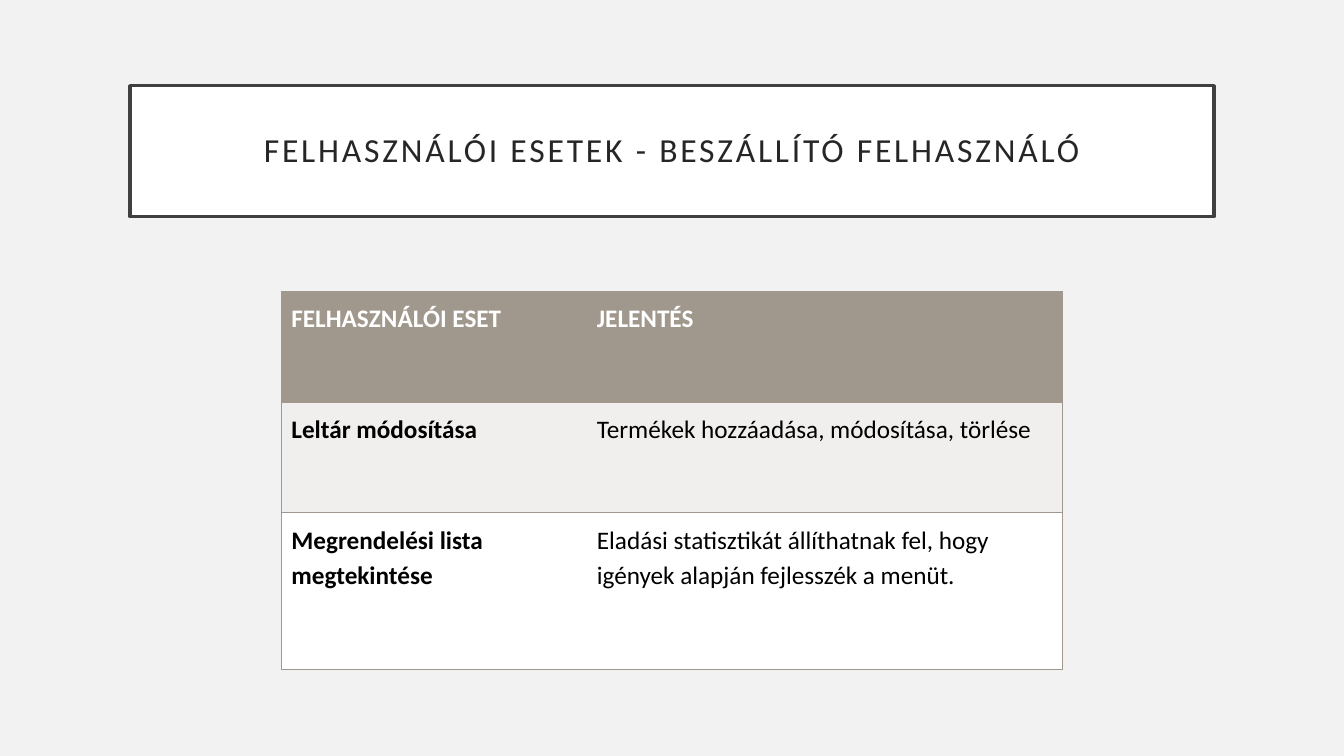
from lxml import etree
from pptx import Presentation
from pptx import util as u
from pptx.dml import color
from pptx.enum import text
from pptx.oxml import ns

COLORS = {
    "background": "F2F2F2",
    "white": "FFFFFF",
    "frame": "404040",
    "title": "262626",
    "taupe": "A0988C",
    "band": "F0EFEE",
    "black": "000000",
}
FONT = "Calibri"
ROWS = [
    ("FELHASZNÁLÓI ESET", "JELENTÉS"),
    ("Leltár módosítása", "Termékek hozzáadása, módosítása, törlése"),
    (
        "Megrendelési lista megtekintése",
        "Eladási statisztikát állíthatnak fel, hogy igények alapján fejlesszék a menüt.",
    ),
]
ROW_STYLES = [("taupe", "white"), ("band", "black"), ("white", "black")]
COLUMN_SHARES = (0.391, 0.609)
ROW_SHARES = (0.293, 0.293, 0.414)


def rgb(name):
    return color.RGBColor.from_string(COLORS[name])


def paint(fill, name):
    fill.solid()
    fill.fore_color.rgb = rgb(name)


def write(frame, content, size, ink, bold=False, align=None, leading=1.0,
          tracking=0, insets=(0.1, 0.08), anchor=text.MSO_ANCHOR.TOP):
    frame.word_wrap = True
    frame.vertical_anchor = anchor
    frame.margin_left = frame.margin_right = u.Inches(insets[0])
    frame.margin_top = frame.margin_bottom = u.Inches(insets[1])
    para = frame.paragraphs[0]
    para.alignment = align
    para.line_spacing = leading
    span = para.add_run()
    span.text = content
    span.font.name = FONT
    span.font.size = u.Pt(size)
    span.font.bold = bold
    span.font.color.rgb = rgb(ink)
    if tracking:
        span.font._element.set("spc", str(tracking * 100))


def set_borders(cell, visible):
    properties = cell._tc.get_or_add_tcPr()
    for side in "LRTB":
        line = etree.SubElement(properties, ns.qn(f"a:ln{side}"), w=str(u.Pt(1)))
        if side in visible:
            solid = etree.SubElement(line, ns.qn("a:solidFill"))
            etree.SubElement(solid, ns.qn("a:srgbClr"), val=COLORS["taupe"])
        else:
            etree.SubElement(line, ns.qn("a:noFill"))


def add_title(page, left, top, width, height):
    box = page.shapes.title
    box.left, box.top = u.Inches(left), u.Inches(top)
    box.width, box.height = u.Inches(width), u.Inches(height)
    paint(box.fill, "white")
    box.line.color.rgb = rgb("frame")
    box.line.width = u.Pt(2.5)
    box.text_frame.auto_size = text.MSO_AUTO_SIZE.NONE
    write(box.text_frame, "FELHASZNÁLÓI ESETEK - BESZÁLLÍTÓ FELHASZNÁLÓ", 24, "title",
          align=text.PP_ALIGN.CENTER, leading=0.9, tracking=2, insets=(0.2, 0.2),
          anchor=text.MSO_ANCHOR.MIDDLE)


def add_use_cases(page, left, top, width, height):
    table = page.shapes.add_table(
        len(ROWS), len(COLUMN_SHARES),
        u.Inches(left), u.Inches(top), u.Inches(width), u.Inches(height),
    ).table
    table.first_row = table.horz_banding = False
    for column, share in zip(table.columns, COLUMN_SHARES):
        column.width = u.Inches(width * share)
    for row, share in zip(table.rows, ROW_SHARES):
        row.height = u.Inches(height * share)
    for r, (contents, (fill, ink)) in enumerate(zip(ROWS, ROW_STYLES)):
        for c, content in enumerate(contents):
            cell = table.cell(r, c)
            set_borders(cell, "LTB" if c == 0 else "RTB")
            paint(cell.fill, fill)
            write(cell.text_frame, content, 18, ink, bold=r == 0 or c == 0, leading=1.15)
            cell.margin_left = cell.margin_right = u.Inches(0.1)
            cell.margin_top = cell.margin_bottom = u.Inches(0.08)


def main():
    deck = Presentation()
    deck.slide_width, deck.slide_height = u.Inches(13.33), u.Inches(7.5)
    page = deck.slides.add_slide(deck.slide_layouts[5])
    paint(page.background.fill, "background")
    add_title(page, 1.29, 0.85, 10.75, 1.3)
    add_use_cases(page, 2.79, 2.89, 7.75, 3.75)
    deck.save("out.pptx")


if __name__ == "__main__":
    main()
